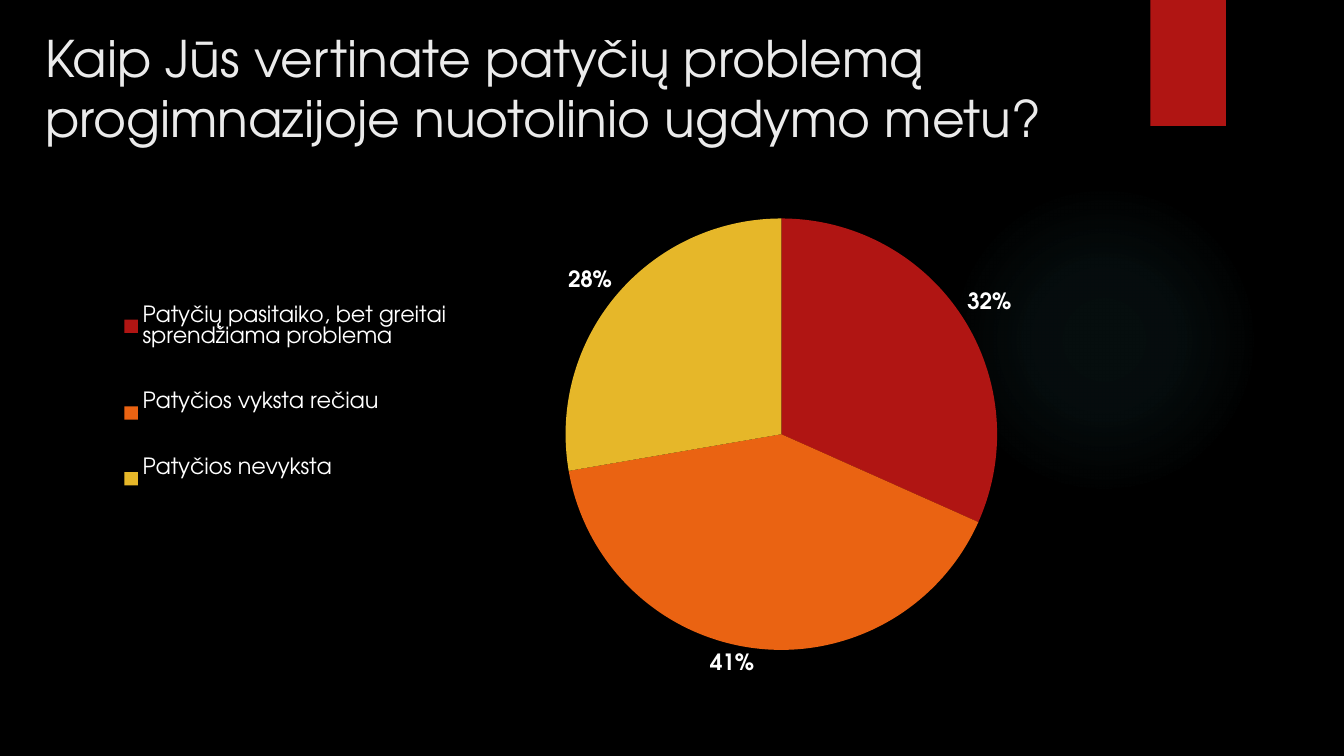
from dataclasses import dataclass
from lxml import etree
from pptx import Presentation
from pptx.chart.data import CategoryChartData
from pptx.dml.color import RGBColor
from pptx.enum.chart import XL_CHART_TYPE, XL_LABEL_POSITION, XL_LEGEND_POSITION
from pptx.enum.shapes import MSO_SHAPE
from pptx.enum.text import MSO_ANCHOR
from pptx.oxml import parse_xml
from pptx.oxml.ns import nsdecls, qn
from pptx.util import Emu, Pt

PX = 9144  # 100 px to the inch


@dataclass(frozen=True)
class Theme:
    font: str = "TeX Gyre Adventor"
    background: str = "000000"
    title: str = "EBEBEB"
    text: str = "FFFFFF"
    accent: str = "B01513"
    glow: str = "50B9C1"
    slices: tuple = ("B01513", "EA6312", "E6B729")
    title_size: int = 36
    chart_size: int = 18
    label_size: int = 16


THEME = Theme()
ANSWERS = {
    "Patyčių pasitaiko, bet greitai sprendžiama problema": 32,
    "Patyčios vyksta rečiau": 41,
    "Patyčios nevyksta": 28,
}


def px(*lengths):
    return [Emu(length * PX) for length in lengths]


def set_font(font, size, color, bold=False):
    font.name = THEME.font
    font.size = Pt(size)
    font.bold = bold
    font.color.rgb = RGBColor.from_string(color)


def add_plain_shape(slide, kind, box):
    shape = slide.shapes.add_shape(kind, *px(*box))
    shape.shadow.inherit = False
    shape.line.fill.background()
    return shape


def add_glow(slide, box):
    """Draw a faint circle that fades out towards its rim."""
    shape = add_plain_shape(slide, MSO_SHAPE.OVAL, box)
    stops = "".join(
        f'<a:gs pos="{position}000"><a:srgbClr val="{THEME.glow}">'
        f'<a:alpha val="{alpha}000"/></a:srgbClr></a:gs>'
        for position, alpha in ((0, 7), (36, 6), (69, 0))
    )
    gradient = parse_xml(
        f'<a:gradFill {nsdecls("a")}><a:gsLst>{stops}</a:gsLst><a:path path="circle">'
        '<a:fillToRect l="50000" t="50000" r="50000" b="50000"/></a:path></a:gradFill>'
    )
    shape._element.spPr.find(qn("a:prstGeom")).addnext(gradient)


def add_ribbon(slide, box):
    shape = add_plain_shape(slide, MSO_SHAPE.RECTANGLE, box)
    shape.fill.solid()
    shape.fill.fore_color.rgb = RGBColor.from_string(THEME.accent)


def add_title(slide, box, text):
    text_frame = slide.shapes.add_textbox(*px(*box)).text_frame
    text_frame.word_wrap = True
    text_frame.vertical_anchor = MSO_ANCHOR.TOP
    text_frame.text = text
    set_font(text_frame.paragraphs[0].runs[0].font, THEME.title_size, THEME.title)


def set_layout(element, x, y, width, height, inner=False):
    """Place a chart part by fractions of the chart's size."""
    for old_layout in element.findall(qn("c:layout")):
        element.remove(old_layout)
    layout = etree.Element(qn("c:layout"))
    manual = etree.SubElement(layout, qn("c:manualLayout"))
    values = {"layoutTarget": "inner"} if inner else {}
    values |= {"xMode": "edge", "yMode": "edge", "x": x, "y": y, "w": width, "h": height}
    for name, value in values.items():
        etree.SubElement(manual, qn(f"c:{name}")).set("val", str(value))
    if inner:
        element.insert(0, layout)
    else:
        element.find(qn("c:legendPos")).addnext(layout)


def add_answer_pie(slide, box):
    data = CategoryChartData()
    data.categories = list(ANSWERS)
    data.add_series("Series 1", list(ANSWERS.values()))
    chart = slide.shapes.add_chart(XL_CHART_TYPE.PIE, *px(*box), data).chart
    set_font(chart.font, THEME.chart_size, THEME.text)
    chart.has_title = False

    chart.has_legend = True
    chart.legend.position = XL_LEGEND_POSITION.RIGHT
    chart.legend.include_in_layout = False
    set_font(chart.legend.font, THEME.label_size, THEME.text)
    set_layout(chart.legend._element, 0.03, 0.16, 0.3, 0.5)

    plot = chart.plots[0]
    plot.vary_by_categories = True
    set_layout(chart._chartSpace.chart.plotArea, 0.41, 0.08, 0.36, 0.82, inner=True)
    for index, color in enumerate(THEME.slices):
        fill = plot.series[0].points[index].format.fill
        fill.solid()
        fill.fore_color.rgb = RGBColor.from_string(color)

    plot.has_data_labels = True
    labels = plot.data_labels
    labels.show_value = False
    labels.show_percentage = True
    labels.number_format = "0%"
    labels.number_format_is_linked = False
    labels.position = XL_LABEL_POSITION.OUTSIDE_END
    set_font(labels.font, THEME.label_size, THEME.text, bold=True)


def build_survey_slide(presentation):
    slide = presentation.slides.add_slide(presentation.slide_layouts[6])
    slide.background.fill.solid()
    slide.background.fill.fore_color.rgb = RGBColor.from_string(THEME.background)
    add_glow(slide, (941, 183, 308, 308))
    add_ribbon(slide, (1141, 0, 75, 125))
    add_title(
        slide,
        (35, 22, 1029, 153),
        "Kaip Jūs vertinate patyčių problemą progimnazijoje nuotolinio ugdymo metu?",
    )
    add_answer_pie(slide, (67, 175, 1200, 522))


def main():
    presentation = Presentation()
    presentation.slide_width, presentation.slide_height = px(1333, 750)
    build_survey_slide(presentation)
    presentation.save("out.pptx")


if __name__ == "__main__":
    main()
